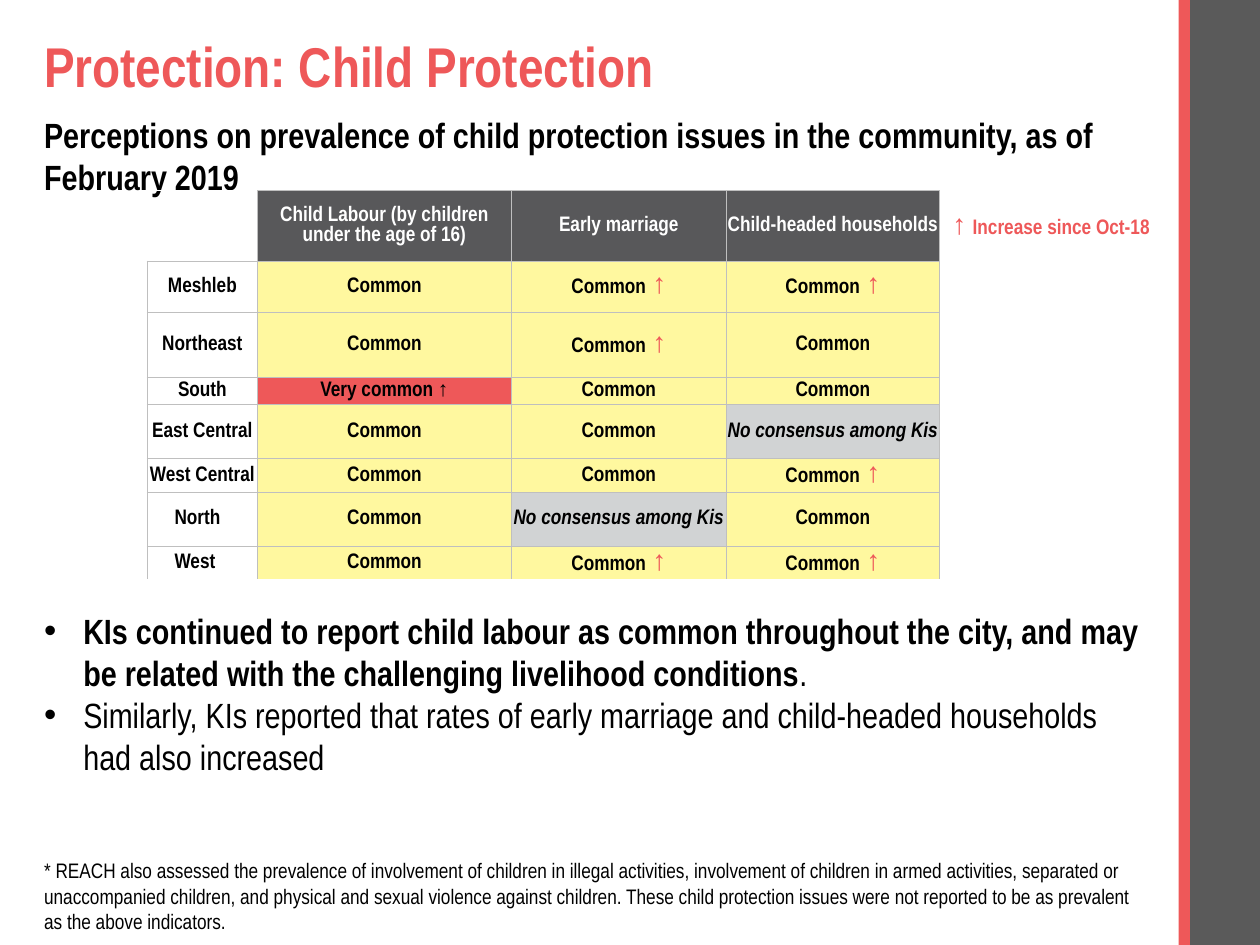
from lxml.etree import SubElement
from pptx import Presentation
from pptx.dml.color import RGBColor
from pptx.enum.shapes import MSO_SHAPE as Shape
from pptx.enum.text import MSO_ANCHOR as Anchor, PP_ALIGN as Align
from pptx.oxml.ns import qn
from pptx.util import Cm, Pt

FONT = "Arial Narrow"
RED, DARK, BLACK, WHITE = "EE5859", "58585A", "000000", "FFFFFF"
YELLOW, GREY, BORDER = "FFF89F", "D1D3D4", "BFBFBF"

COMMON, INCREASED = "Common", "Common ↑"
VERY_COMMON, NO_CONSENSUS = "Very common ↑", "No consensus among Kis"
FILLS = {COMMON: YELLOW, INCREASED: YELLOW, VERY_COMMON: RED, NO_CONSENSUS: GREY}

HEADERS = ["Child Labour (by children under the age of 16)", "Early marriage",
           "Child-headed households"]
# Area, row height in cm, then one rating per issue
AREAS = [
    ("Meshleb", 1.04, COMMON, INCREASED, INCREASED),
    ("Northeast", 1.3, COMMON, INCREASED, COMMON),
    ("South", 0.56, VERY_COMMON, COMMON, COMMON),
    ("East Central", 1.09, COMMON, COMMON, NO_CONSENSUS),
    ("West Central", 0.56, COMMON, COMMON, INCREASED),
    ("North", 1.09, COMMON, NO_CONSENSUS, COMMON),
    ("West", 0.56, COMMON, INCREASED, INCREASED),
]
COLUMN_WIDTHS = [2.22, 5.12, 4.33, 4.3]
HEADER_HEIGHT = 1.42
LABEL_RIGHT_MARGINS = {"North": 0.2, "West": 0.3}


def color(value):
    return RGBColor.from_string(value)


def add_run(paragraph, text, size, fill=BLACK, bold=False, italic=False):
    run = paragraph.add_run()
    run.text = text
    font = run.font
    font.name, font.size = FONT, Pt(size)
    font.bold, font.italic = bold, italic
    font.color.rgb = color(fill)


def add_bar(slide, left, width, fill):
    bar = slide.shapes.add_shape(Shape.RECTANGLE, Cm(left), 0, Cm(width), Cm(19.05))
    bar.shadow.inherit = False
    bar.fill.solid()
    bar.fill.fore_color.rgb = color(fill)
    bar.line.fill.background()


def add_text_box(slide, left, top, width, height):
    box = slide.shapes.add_textbox(Cm(left), Cm(top), Cm(width), Cm(height))
    box.text_frame.word_wrap = True
    return box.text_frame


def add_bullet(paragraph):
    properties = paragraph._p.get_or_add_pPr()
    properties.set("marL", str(Cm(0.79)))
    properties.set("indent", str(-Cm(0.79)))
    SubElement(properties, qn("a:buFont")).set("typeface", "Arial")
    SubElement(properties, qn("a:buChar")).set("char", "•")


def set_borders(cell, sides):
    properties = cell._tc.get_or_add_tcPr()
    for position, side in enumerate(sides):
        line = properties.makeelement(qn(f"a:ln{side}"), {"w": str(Pt(0.5))})
        fill = SubElement(line, qn("a:solidFill"))
        SubElement(fill, qn("a:srgbClr")).set("val", BORDER)
        properties.insert(position, line)


def fill_cell(cell, text, fill=None, text_color=BLACK, right_margin=0):
    cell.vertical_anchor = Anchor.MIDDLE
    cell.margin_left = cell.margin_top = cell.margin_bottom = 0
    cell.margin_right = Cm(right_margin)
    if fill:
        cell.fill.solid()
        cell.fill.fore_color.rgb = color(fill)
    else:
        cell.fill.background()
    paragraph = cell.text_frame.paragraphs[0]
    paragraph.alignment = Align.CENTER
    if text == INCREASED:
        add_run(paragraph, COMMON, 12, text_color, bold=True)
        add_run(paragraph, " ↑", 16, RED, bold=True)
    else:
        add_run(paragraph, text, 12, text_color, True, text == NO_CONSENSUS)


def add_ratings_table(slide):
    heights = [HEADER_HEIGHT] + [area[1] for area in AREAS]
    frame = slide.shapes.add_table(
        len(heights), len(COLUMN_WIDTHS), Cm(2.97), Cm(3.84),
        Cm(sum(COLUMN_WIDTHS)), Cm(sum(heights)))
    table = frame.table
    table.first_row = table.horz_banding = False
    for column, width in zip(table.columns, COLUMN_WIDTHS):
        column.width = Cm(width)
    for row, height in zip(table.rows, heights):
        row.height = Cm(height)

    # Header row, with an open corner
    table.cell(0, 0).fill.background()
    for column, header in enumerate(HEADERS, 1):
        fill_cell(table.cell(0, column), header, DARK, WHITE)

    # One row per area
    for row, (area, _, *ratings) in enumerate(AREAS, 1):
        fill_cell(table.cell(row, 0), area,
                  right_margin=LABEL_RIGHT_MARGINS.get(area, 0))
        for column, rating in enumerate(ratings, 1):
            fill_cell(table.cell(row, column), rating, FILLS[rating])

    # Grid lines; the last row is open at the bottom
    for row in range(len(heights)):
        for column in range(len(COLUMN_WIDTHS)):
            sides = "LRT" if row == len(AREAS) else "LRTB"
            set_borders(table.cell(row, column), "RB" if row == column == 0 else sides)


def main():
    presentation = Presentation()
    presentation.slide_width, presentation.slide_height = Cm(25.4), Cm(19.05)
    slide = presentation.slides.add_slide(presentation.slide_layouts[6])

    # Side bars
    add_bar(slide, 23.95, 1.45, "5A5A5A")
    add_bar(slide, 23.76, 0.23, RED)

    # Title and subtitle
    title = add_text_box(slide, 0.64, 0.46, 23.29, 1.88)
    title.vertical_anchor = Anchor.MIDDLE
    title.paragraphs[0].line_spacing = 0.9
    add_run(title.paragraphs[0], "Protection: Child Protection", 32, RED, bold=True)
    subtitle = add_text_box(slide, 0.64, 2.16, 22.71, 1.96)
    add_run(subtitle.paragraphs[0],
            "Perceptions on prevalence of child protection issues in the community, "
            "as of February 2019", 20, bold=True)

    # Ratings and legend
    add_ratings_table(slide)
    legend = add_text_box(slide, 18.95, 4.04, 4.93, 1.63).paragraphs[0]
    add_run(legend, "↑ ", 16, RED, bold=True)
    add_run(legend, "Increase since Oct-18", 12, RED, bold=True)

    # Findings
    findings = add_text_box(slide, 0.64, 12.17, 22.71, 3.68)
    first, second = findings.paragraphs[0], findings.add_paragraph()
    add_bullet(first)
    add_run(first, "KIs continued to report child labour as common throughout the city, "
            "and may be related with the challenging livelihood conditions", 20, bold=True)
    add_run(first, ".", 20)
    add_bullet(second)
    add_run(second, "Similarly, KIs reported that rates of early marriage and "
            "child-headed households had also increased", 20)

    # Footnote
    footnote = add_text_box(slide, 0.64, 17.17, 22.5, 1.88)
    add_run(footnote.paragraphs[0],
            "* REACH also assessed the prevalence of involvement of children in illegal "
            "activities, involvement of children in armed activities, separated or "
            "unaccompanied children, and physical and sexual violence against children. "
            "These child protection issues were not reported to be as prevalent as the "
            "above indicators.", 12)

    presentation.save("out.pptx")


if __name__ == "__main__":
    main()
